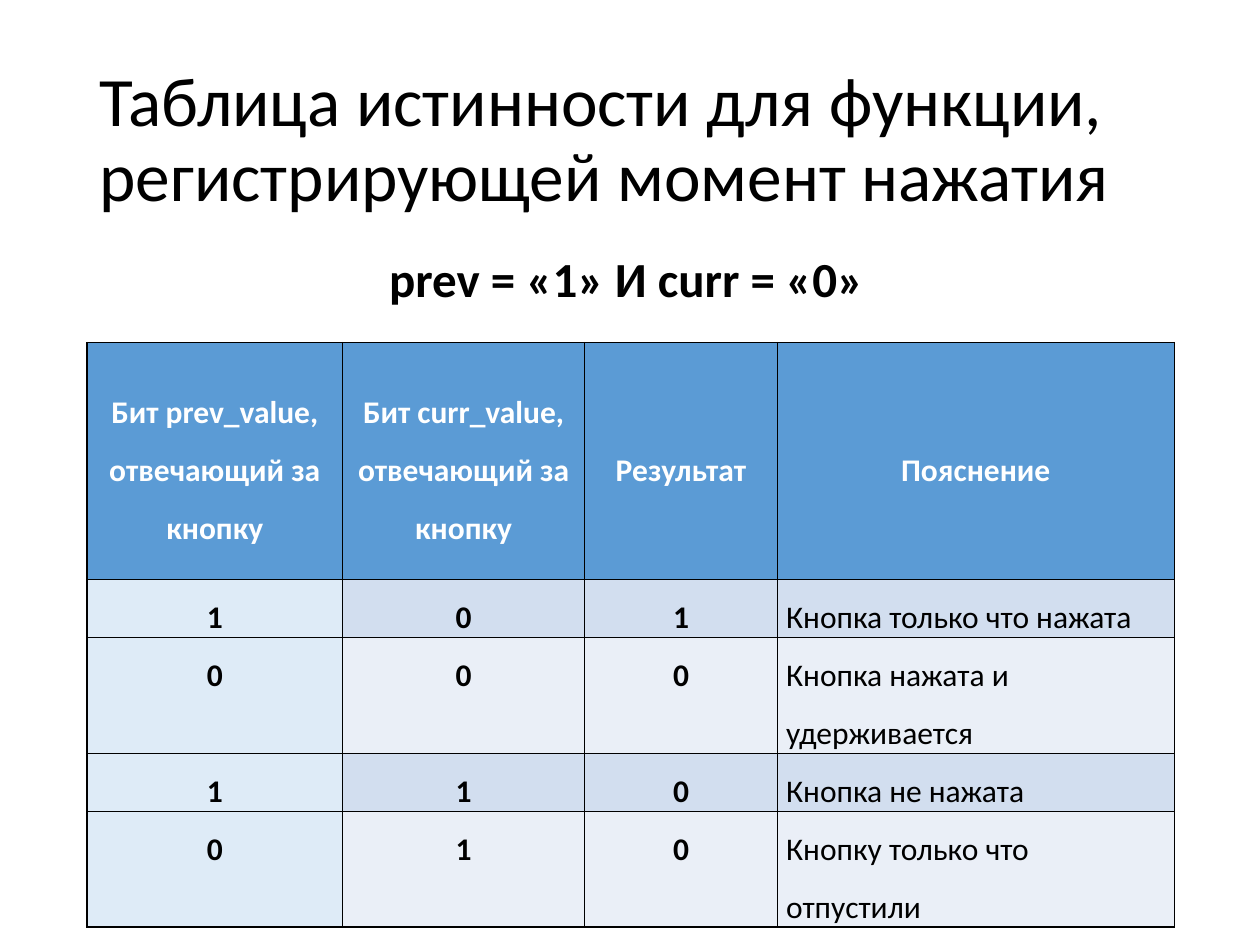
from lxml.etree import SubElement
from pptx import Presentation
from pptx.dml.color import RGBColor
from pptx.enum.text import MSO_ANCHOR, MSO_AUTO_SIZE, PP_ALIGN
from pptx.oxml.ns import qn
from pptx.util import Inches, Pt

COLORS = {
    "text": "000000",
    "header": "5B9BD5",
    "header_text": "FFFFFF",
    "first_column": "DEEBF7",
    "odd_row": "D2DEEF",
    "even_row": "EAEFF7",
    "border": "000000",
}
FONT = "Calibri"
COLUMN_WIDTHS = [2.03, 1.92, 1.53, 3.15]
ROW_HEIGHTS = [1.88, 0.46, 0.92, 0.46, 0.92]
TRUTH_TABLE = [
    ["Бит prev_value, отвечающий за кнопку", "Бит curr_value, отвечающий за кнопку",
     "Результат", "Пояснение"],
    ["1", "0", "1", "Кнопка только что нажата"],
    ["0", "0", "0", "Кнопка нажата и удерживается"],
    ["1", "1", "0", "Кнопка не нажата"],
    ["0", "1", "0", "Кнопку только что отпустили"],
]


def color(name):
    return RGBColor.from_string(COLORS[name])


def format_paragraph(paragraph, size, bold, color_name, alignment, line_spacing):
    paragraph.alignment = alignment
    paragraph.line_spacing = line_spacing
    for run in paragraph.runs:
        run.font.name = FONT
        run.font.size = Pt(size)
        run.font.bold = bold
        run.font.color.rgb = color(color_name)


def add_title(slide, left, top, width, height):
    title = slide.shapes.title
    title.left, title.top = Inches(left), Inches(top)
    title.width, title.height = Inches(width), Inches(height)
    text_frame = title.text_frame
    text_frame.text = "Таблица истинности для функции, регистрирующей момент нажатия"
    text_frame.auto_size = MSO_AUTO_SIZE.NONE
    text_frame.vertical_anchor = MSO_ANCHOR.MIDDLE
    format_paragraph(text_frame.paragraphs[0], 39.6, False, "text", PP_ALIGN.LEFT, 0.9)


def add_condition(slide, left, top, width, height):
    box = slide.shapes.add_textbox(Inches(left), Inches(top), Inches(width), Inches(height))
    text_frame = box.text_frame
    text_frame.text = "prev = «1» И curr = «0»"
    text_frame.word_wrap = False
    text_frame.auto_size = MSO_AUTO_SIZE.SHAPE_TO_FIT_TEXT
    format_paragraph(text_frame.paragraphs[0], 28, True, "text", PP_ALIGN.LEFT, 1.0)


def set_borders(cell):
    properties = cell._tc.get_or_add_tcPr()
    for position, side in enumerate(("a:lnL", "a:lnR", "a:lnT", "a:lnB")):
        line = SubElement(properties, qn(side), w=str(Pt(1)))
        fill = SubElement(line, qn("a:solidFill"))
        SubElement(fill, qn("a:srgbClr"), val=COLORS["border"])
        # Border lines come before the cell fill
        properties.insert(position, line)


def cell_fill(row, column):
    if row == 0:
        return "header"
    if column == 0:
        return "first_column"
    return "odd_row" if row % 2 else "even_row"


def format_cell(cell, text, row, column):
    is_header = row == 0
    is_note = not is_header and column == len(COLUMN_WIDTHS) - 1
    cell.text_frame.text = text
    cell.margin_left = cell.margin_right = Inches(0.07)
    cell.margin_top = cell.margin_bottom = 0
    cell.vertical_anchor = MSO_ANCHOR.MIDDLE if is_header else MSO_ANCHOR.TOP
    format_paragraph(
        cell.text_frame.paragraphs[0], 18, not is_note,
        "header_text" if is_header else "text",
        PP_ALIGN.LEFT if is_note else PP_ALIGN.CENTER, 1.5)
    cell.fill.solid()
    cell.fill.fore_color.rgb = color(cell_fill(row, column))
    set_borders(cell)


def add_truth_table(slide, left, top, width, height):
    frame = slide.shapes.add_table(
        len(ROW_HEIGHTS), len(COLUMN_WIDTHS),
        Inches(left), Inches(top), Inches(width), Inches(height))
    table = frame.table
    for column, column_width in zip(table.columns, COLUMN_WIDTHS):
        column.width = Inches(column_width)
    for row, row_height in zip(table.rows, ROW_HEIGHTS):
        row.height = Inches(row_height)
    for row, texts in enumerate(TRUTH_TABLE):
        for column, text in enumerate(texts):
            format_cell(table.cell(row, column), text, row, column)


def main():
    presentation = Presentation()
    presentation.slide_width, presentation.slide_height = Inches(10), Inches(7.5)
    slide = presentation.slides.add_slide(presentation.slide_layouts[5])
    # Heading, condition and truth table from top to bottom
    add_title(slide, 0.69, 0.4, 8.62, 1.45)
    add_condition(slide, 2.99, 1.92, 4.02, 0.57)
    add_truth_table(slide, 0.69, 2.72, sum(COLUMN_WIDTHS), sum(ROW_HEIGHTS))
    presentation.save("out.pptx")


if __name__ == "__main__":
    main()
